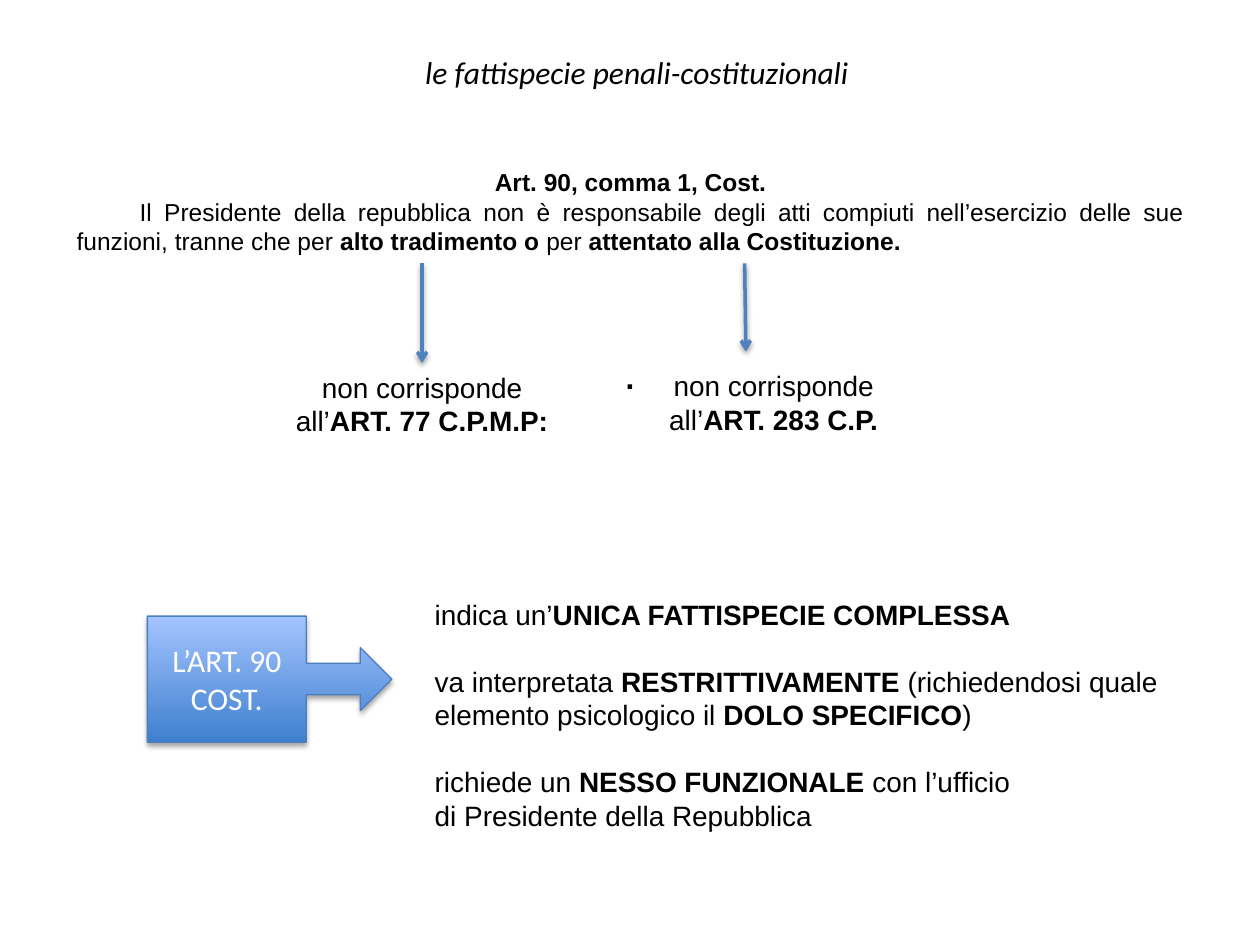
from dataclasses import dataclass

from lxml import etree
from pptx import Presentation
from pptx import util as u
from pptx.dml.color import RGBColor
from pptx.enum import shapes, text
from pptx.oxml import ns


@dataclass(frozen=True)
class Theme:
    """Colours, fonts and type sizes of the page."""
    ink: str = "000000"
    paper: str = "FFFFFF"
    accent: str = "4F81BD"
    edge: str = "4B7EBC"
    deep: str = "3F80CE"
    pale: str = "A4C4FF"
    heading_font: str = "Calibri"
    text_font: str = "Arial"
    large: int = 18
    medium: int = 16
    small: int = 14


class Page:
    """One slide on a grid of 100 columns and 75 rows."""

    def __init__(self, deck, theme):
        """Add a slide with title and body placeholders."""
        self.theme = theme
        self.slide = deck.slides.add_slide(deck.slide_layouts[1])
        self.column = deck.slide_width / 100
        self.row = deck.slide_height / 75

    def grid(self, *cells):
        """Turn alternating columns and rows into lengths."""
        units = (self.column, self.row) * 2
        return [u.Emu(round(cell * unit)) for cell, unit in zip(cells, units)]

    def place(self, box, cells):
        """Move a box to its grid cells."""
        box.left, box.top, box.width, box.height = self.grid(*cells)

    def typeset(self, box, lines, size, align, font=None, color=None, italic=False, wrap=True):
        """Fill a box with lines whose bold parts stand between asterisks."""
        frame = box.text_frame
        frame.text = "\n".join(lines)
        frame.word_wrap = wrap
        frame.auto_size = text.MSO_AUTO_SIZE.NONE
        for para, line in zip(frame.paragraphs, lines):
            para.text = ""
            para.alignment = align
            para.space_before = u.Pt(0)
            for index, part in enumerate(line.split("*")):
                if part:
                    span = para.add_run()
                    span.text = part
                    span.font.bold = index % 2 == 1
                    span.font.italic = italic
                    span.font.size = u.Pt(size)
                    span.font.name = font or self.theme.text_font
                    span.font.color.rgb = RGBColor.from_string(color or self.theme.ink)
        return frame.paragraphs

    def title(self, cells, line):
        """Set the title placeholder."""
        box = self.slide.shapes.title
        self.place(box, cells)
        self.typeset(box, [line], self.theme.large, text.PP_ALIGN.CENTER,
                     self.theme.heading_font, italic=True, wrap=False)

    def points(self, cells, groups):
        """Set the body placeholder as groups of lines without bullets."""
        box = self.slide.placeholders[1]
        self.place(box, cells)
        lines = [line for group in groups for line in group]
        paras = self.typeset(box, lines, self.theme.medium, text.PP_ALIGN.LEFT)
        starts = {group[0] for group in groups[1:]}
        for para, line in zip(paras, lines):
            if line in starts:
                para.space_before = u.Pt(19)
            props = para._p.get_or_add_pPr()
            props.set("marL", "0")
            props.set("indent", "0")
            etree.SubElement(props, ns.qn("a:buNone"))

    def label(self, cells, lines, size, wrap=False):
        """Add a centred text box and return its paragraphs."""
        box = self.slide.shapes.add_textbox(*self.grid(*cells))
        return self.typeset(box, lines, size, text.PP_ALIGN.CENTER, wrap=wrap)

    def article(self, cells, heading, line):
        """Add a centred heading over a justified, indented paragraph."""
        para = self.label(cells, [heading, line], self.theme.small, wrap=True)[1]
        para.alignment = text.PP_ALIGN.JUSTIFY
        para._p.get_or_add_pPr().set("indent", str(u.Inches(0.5)))

    def shade(self, item, alpha, distance):
        """Give an item a soft shadow below it."""
        props = item._element.spPr
        for old in props.findall(ns.qn("a:effectLst")):
            props.remove(old)
        effects = etree.SubElement(props, ns.qn("a:effectLst"))
        shadow = etree.SubElement(effects, ns.qn("a:outerShdw"), blurRad=str(u.Pt(3.1)),
                                  dist=str(u.Pt(distance)), dir="5400000", rotWithShape="0")
        tint = etree.SubElement(shadow, ns.qn("a:srgbClr"), val=self.theme.ink)
        etree.SubElement(tint, ns.qn("a:alpha"), val=str(alpha * 1000))

    def arrow(self, *cells):
        """Add a line with an open arrowhead at its end."""
        line = self.slide.shapes.add_connector(shapes.MSO_CONNECTOR.STRAIGHT, *self.grid(*cells))
        line.line.color.rgb = RGBColor.from_string(self.theme.accent)
        line.line.width = u.Pt(2)
        etree.SubElement(line._element.spPr.find(ns.qn("a:ln")), ns.qn("a:tailEnd"), type="arrow")
        self.shade(line, 38, 1.6)

    def callout(self, cells, lines):
        """Add a gradient callout that points right."""
        box = self.slide.shapes.add_shape(
            shapes.MSO_SHAPE.RIGHT_ARROW_CALLOUT, *self.grid(*cells))
        box.fill.gradient()
        box.fill.gradient_angle = 90
        for stop, color in zip(box.fill.gradient_stops, (self.theme.deep, self.theme.pale)):
            stop.color.rgb = RGBColor.from_string(color)
        box.line.color.rgb = RGBColor.from_string(self.theme.edge)
        box.line.width = u.Pt(0.75)
        self.shade(box, 35, 1.8)
        self.typeset(box, lines, self.theme.large, text.PP_ALIGN.CENTER,
                     self.theme.heading_font, self.theme.paper)
        box.text_frame.vertical_anchor = text.MSO_ANCHOR.MIDDLE


def main():
    """Build the slide and save it."""
    deck = Presentation()
    deck.slide_width, deck.slide_height = u.Inches(10), u.Inches(7.5)
    theme = Theme()
    page = Page(deck, theme)
    page.title((32, 3.7, 37.1, 4), "le fattispecie penali-costituzionali")
    page.article(
        (5.1, 12.8, 89.9, 8.1), "*Art. 90, comma 1, Cost.*",
        "Il Presidente della repubblica non è responsabile degli atti compiuti "
        "nell’esercizio delle sue funzioni, tranne che per *alto tradimento o *per "
        "*attentato alla Costituzione.*")
    page.arrow(33.5, 20.9, 33.5, 28.8)
    page.arrow(59.1, 20.9, 59.2, 27.9)
    for cells, source in (((22.3, 28.9, 22.4, 6.4), "ART. 77 C.P.M.P:"),
                          ((52, 28.8, 18.8, 6.4), "ART. 283 C.P.")):
        page.label(cells, ["non corrisponde", f"all’*{source}*"], theme.medium)
    page.callout((11.7, 48.9, 19.4, 10), ["L’ART. 90", "COST."])
    page.points((33.5, 46.9, 60.2, 22.6), [
        ["indica un’*UNICA FATTISPECIE COMPLESSA*"],
        ["va interpretata *RESTRITTIVAMENTE *(richiedendosi quale",
         "elemento psicologico il *DOLO SPECIFICO*)"],
        ["richiede un *NESSO FUNZIONALE *con l’ufficio",
         "di Presidente della Repubblica"]])
    page.label((25, 27.9, 50, 4), ["*.*"], theme.large, wrap=True)
    deck.save("out.pptx")


if __name__ == "__main__":
    main()
